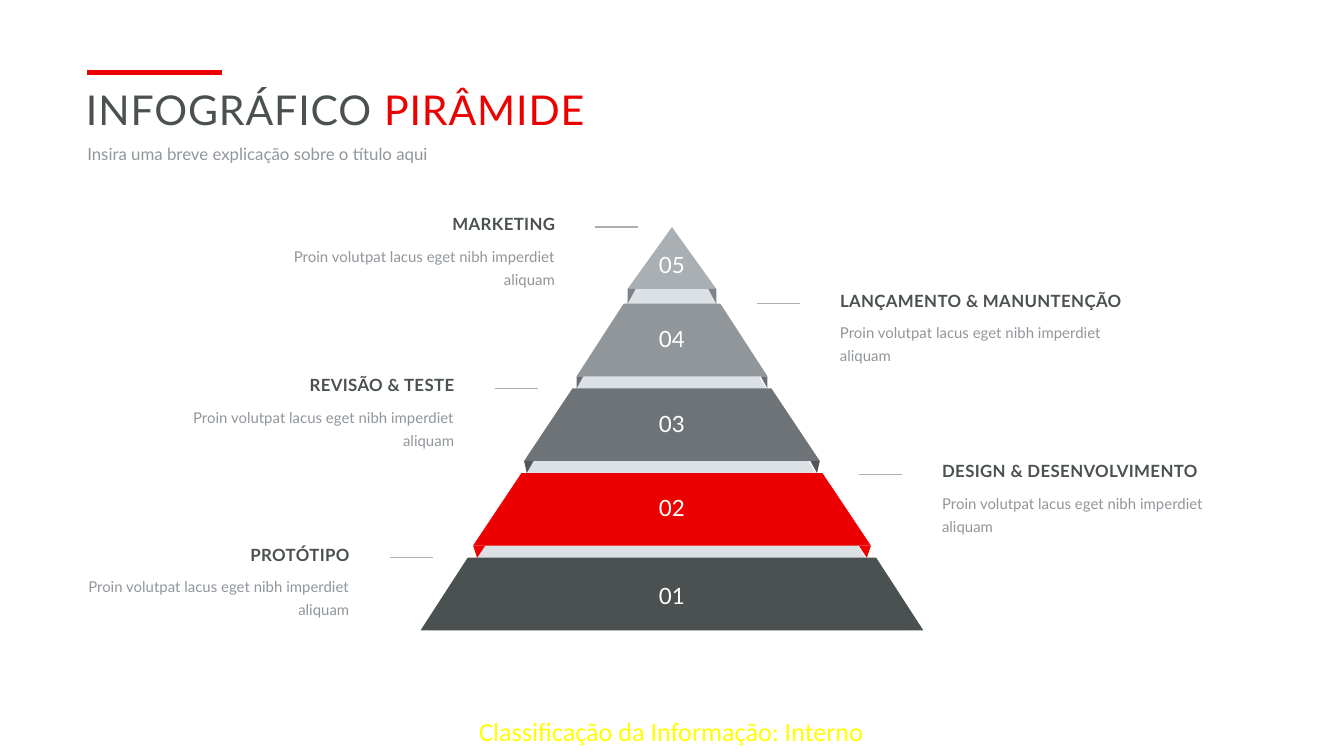
import dataclasses

import pptx
import pptx.dml.color
import pptx.enum.shapes
import pptx.enum.text
import pptx.oxml.ns
import pptx.util
from lxml import etree

PX = 9144  # EMU in one px, 100 px to the inch
SLIDE_WIDTH = 1000
CENTRE = SLIDE_WIDTH // 2  # axis of the pyramid
ALIGN = pptx.enum.text.PP_ALIGN


@dataclasses.dataclass(frozen=True)
class Theme:
    font: str = "Lato"
    footer_font: str = "Calibri"
    dark: str = "4B5050"
    accent: str = "EC0000"
    muted: str = "91969B"
    rule: str = "AAAFB4"
    backing: str = "DCE1E6"
    footer: str = "FFFF00"
    white: str = "FFFFFF"
    title_size: int = 22
    footer_size: int = 14
    number_size: int = 12
    heading_size: int = 9
    body_size: int = 8


THEME = Theme()

# number, fill, fold fill, top, bottom, fold bottom, number top, then distances
# from the axis: half top, half bottom, fold tip, fold inner edge
TIERS = [
    ("01", THEME.dark, None, 415, 469, 469, 433, 152, 187, 0, 0),
    ("02", THEME.accent, THEME.accent, 352, 406, 415, 368, 112, 148, 145, 139),
    ("03", "6E7378", "52565A", 289, 343, 352, 305, 74, 110, 108, 103),
    ("04", THEME.muted, "6B7076", 226, 280, 289, 242, 36, 71, 71, 66),
    ("05", THEME.rule, "7C838B", 169, 215, 226, 187, 0, 33, 33, 27),
]

# heading, side of the pyramid, text edge nearest to it, top, heading width
CALLOUTS = [
    ("LANÇAMENTO & MANUNTENÇÃO", 1, 625, 216, 219),
    ("DESIGN & DESENVOLVIMENTO", 1, 701, 343, 195),
    ("REVISÃO & TESTE", -1, 338, 279, 195),
    ("PROTÓTIPO", -1, 260, 405, 195),
    ("MARKETING", -1, 413, 159, 195),
]
CALLOUT_BODY = "Proin volutpat lacus eget nibh imperdiet aliquam"
BODY_WIDTH = 196


def px(value):
    return pptx.util.Emu(value * PX)


def rgb(value):
    return pptx.dml.color.RGBColor.from_string(value)


def apply_format(target, values):
    for name, value in values.items():
        setattr(target, name, value)


def add_text(slide, box, runs, size, paragraph_format=None, bold=False,
             spacing=0, font=THEME.font, anchor=pptx.enum.text.MSO_ANCHOR.TOP):
    """Add a one-paragraph text box; runs are (text, colour) pairs."""
    frame = slide.shapes.add_textbox(*map(px, box)).text_frame
    apply_format(frame, {
        "word_wrap": True, "vertical_anchor": anchor,
        "margin_left": 0, "margin_right": 0, "margin_top": 0, "margin_bottom": 0,
    })
    paragraph = frame.paragraphs[0]
    apply_format(paragraph, paragraph_format or {})
    for text, colour in runs:
        run = paragraph.add_run()
        run.text = text
        apply_format(run.font, {"name": font, "size": pptx.util.Pt(size), "bold": bold})
        run.font.color.rgb = rgb(colour)
        if spacing:
            run.font._element.set("spc", str(spacing))


def add_rule(slide, left, right, y, colour, width):
    connector = slide.shapes.add_connector(
        pptx.enum.shapes.MSO_CONNECTOR.STRAIGHT, px(left), px(y), px(right), px(y))
    connector.line.color.rgb = rgb(colour)
    connector.line.width = pptx.util.Pt(width)
    etree.SubElement(connector._element.spPr, pptx.oxml.ns.qn("a:effectLst"))


def add_polygon(slide, points, colour):
    builder = slide.shapes.build_freeform(*points[0], scale=PX)
    builder.add_line_segments(points[1:], close=True)
    shape = builder.convert_to_shape()
    shape.shadow.inherit = False
    shape.fill.solid()
    shape.fill.fore_color.rgb = rgb(colour)
    shape.line.fill.background()


def add_tier(slide, fill, fold_fill, top, bottom, fold_bottom,
             half_top, half_bottom, fold_tip, fold_inner):
    outline = [(CENTRE - half_top, top), (CENTRE - half_bottom, bottom),
               (CENTRE + half_bottom, bottom)]
    if half_top:
        outline.append((CENTRE + half_top, top))
    add_polygon(slide, outline, fill)
    if fold_fill:
        for side in (-1, 1):
            add_polygon(slide, [
                (CENTRE + side * half_bottom, bottom),
                (CENTRE + side * fold_tip, fold_bottom),
                (CENTRE + side * fold_inner, bottom),
            ], fold_fill)


def add_number(slide, number, top):
    add_text(slide, (475, top, 50, 20), [(number, THEME.white)],
             THEME.number_size, {"alignment": ALIGN.CENTER})


def add_callout(slide, heading, side, edge, top, heading_width):
    alignment = ALIGN.LEFT if side > 0 else ALIGN.RIGHT

    def box(offset, width, height):
        return (edge if side > 0 else edge - width, top + offset, width, height)

    add_text(slide, box(0, heading_width, 15), [(heading, THEME.dark)],
             THEME.heading_size, {"alignment": alignment}, bold=True, spacing=20)
    add_text(slide, box(21, BODY_WIDTH, 33), [(CALLOUT_BODY, THEME.muted)],
             THEME.body_size, {"alignment": alignment, "line_spacing": 1.3})
    left, right = sorted((edge - side * 62, edge - side * 30))
    add_rule(slide, left, right, top + 10, THEME.rule, 0.75)


def add_header(slide):
    add_rule(slide, 65, 165, 54, THEME.accent, 2.25)
    add_text(slide, (64, 63, 870, 42),
             [("INFOGRÁFICO ", THEME.dark), ("PIRÂMIDE", THEME.accent)],
             THEME.title_size, spacing=50)
    add_text(slide, (65, 105, 870, 15),
             [("Insira uma breve explicação sobre o título aqui", THEME.muted)],
             THEME.heading_size, {"line_spacing": pptx.util.Pt(12)})


def add_footer(slide):
    add_text(slide, (334, 526, 331, 36),
             [("Classificação da Informação: Interno", THEME.footer)],
             THEME.footer_size, {"alignment": ALIGN.CENTER},
             font=THEME.footer_font, anchor=pptx.enum.text.MSO_ANCHOR.MIDDLE)


def main():
    presentation = pptx.Presentation()
    presentation.slide_width = px(SLIDE_WIDTH)
    presentation.slide_height = px(SLIDE_WIDTH) * 9 // 16
    slide = presentation.slides.add_slide(presentation.slide_layouts[6])

    add_footer(slide)
    add_header(slide)

    # Pyramid: pale backing, tiers from the base up, then their numbers
    add_polygon(slide, [(322, 469), (675, 469), (CENTRE, 169)], THEME.backing)
    for _, fill, fold_fill, top, bottom, fold_bottom, _, *halves in TIERS:
        add_tier(slide, fill, fold_fill, top, bottom, fold_bottom, *halves)
    for tier in TIERS:
        add_number(slide, tier[0], tier[6])

    # Explanations on both sides
    for callout in CALLOUTS:
        add_callout(slide, *callout)

    presentation.save("out.pptx")


if __name__ == "__main__":
    main()
